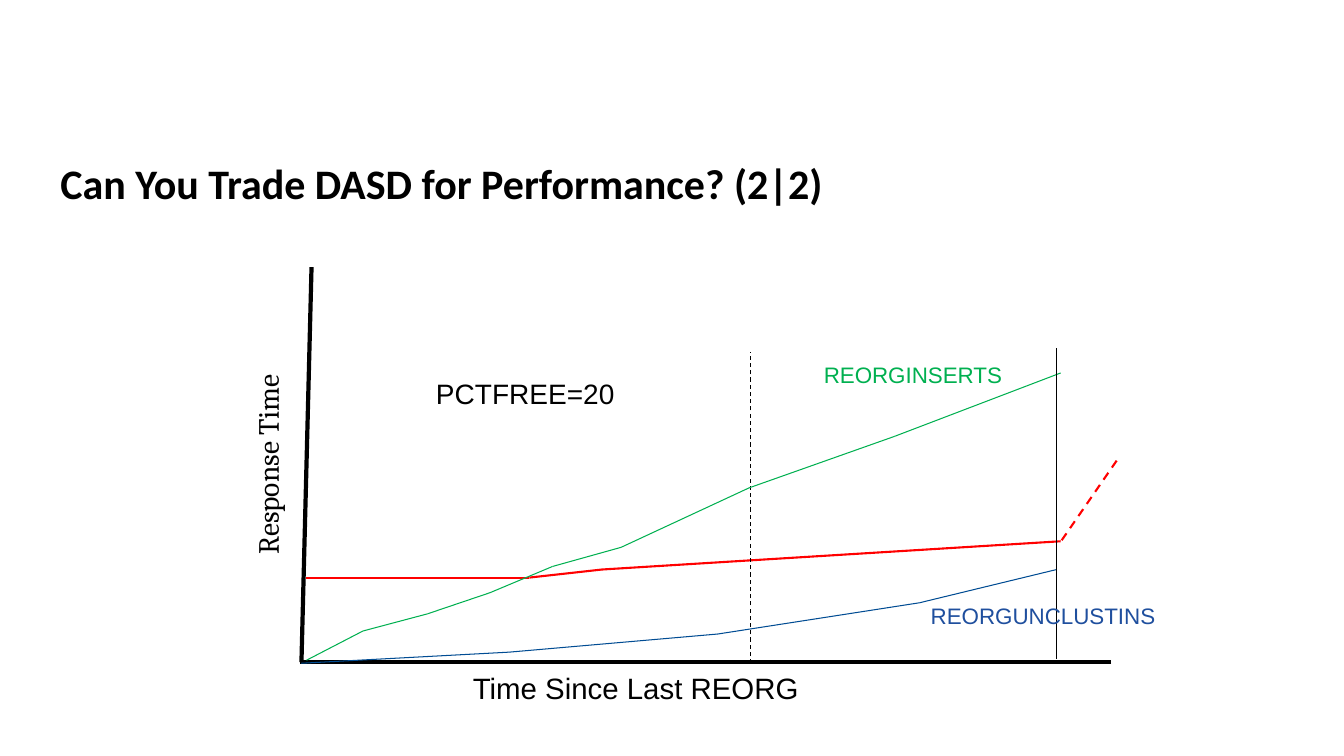
from itertools import pairwise

from lxml.etree import SubElement
from pptx import Presentation
from pptx.dml.color import RGBColor
from pptx.enum.dml import MSO_LINE
from pptx.enum.shapes import MSO_CONNECTOR
from pptx.enum.text import MSO_ANCHOR, MSO_AUTO_SIZE, PP_ALIGN
from pptx.oxml.ns import qn
from pptx.util import Inches, Pt

BLACK = RGBColor(0x00, 0x00, 0x00)
RED = RGBColor(0xFF, 0x00, 0x00)
GREEN = RGBColor(0x00, 0xB0, 0x50)
BLUE = RGBColor(0x00, 0x4C, 0x93)
INDIGO = RGBColor(0x1F, 0x4F, 0x9E)

COLS = 8  # columns across the plot box; cells are square

# Points are (column, row) from the top left of the plot box.
LINES = [
    # points, colour, width, dashed
    ([(0.09, 0.05), (-0.01, 3.97)], BLACK, 3, False),
    ([(8.02, 3.97), (-0.02, 3.97)], BLACK, 3, False),
    ([(0.04, 3.13), (2.25, 3.13), (2.97, 3.05), (4.43, 2.96),
      (7.52, 2.77)], RED, 1.5, False),
    ([(7.53, 2.76), (8.11, 1.92)], RED, 1.5, True),
    ([(4.44, 3.98), (4.44, 0.89)], BLACK, 0.75, True),
    ([(0.04, 3.95), (0.6, 3.66), (1.24, 3.49), (1.86, 3.28), (2.48, 3.02),
      (3.16, 2.83), (4.43, 2.24), (5.87, 1.73), (7.52, 1.1)],
     GREEN, 0.75, False),
    ([(-0.01, 3.98), (2.05, 3.87), (4.12, 3.69), (6.12, 3.38),
      (7.48, 3.05)], BLUE, 0.75, False),
    ([(7.48, 3.94), (7.48, 0.85)], BLACK, 0.75, False),
]

LABELS = [
    # text, (column, row, columns, rows), size, font, colour, turn
    ("Response Time", (-1.61, 1.77, 2.54, 0.47), 21, "Cambria", BLACK, 270),
    ("Time Since Last REORG", (1.45, 4, 3.71, 0.47), 21, "Arial", BLACK, 0),
    ("REORGUNCLUSTINS", (6.05, 3.32, 2.59, 0.38), 16, "Arial", INDIGO, 0),
    ("REORGINSERTS", (4.76, 0.93, 2.59, 0.38), 16, "Arial", GREEN, 0),
    ("PCTFREE=20", (1.18, 1.09, 2.06, 0.45), 20, "Arial", BLACK, 0),
]


def style(para, size, font, color, bold=False):
    for run in para.runs:
        run.font.size = Pt(size)
        run.font.name = font
        run.font.bold = bold
        run.font.color.rgb = color


def add_title(slide, box):
    title = slide.shapes.title
    title.left, title.top, title.width, title.height = box
    frame = title.text_frame
    frame.text = "Can You Trade DASD for Performance? (2|2)"
    frame.auto_size = MSO_AUTO_SIZE.NONE
    frame.vertical_anchor = MSO_ANCHOR.MIDDLE
    para = frame.paragraphs[0]
    para.alignment = PP_ALIGN.LEFT
    para.line_spacing = 0.9
    style(para, 30, "Calibri", BLACK, True)


def add_curve(slide, points, color, width, dashed):
    """Join consecutive slide points with straight connectors."""
    for start, end in pairwise(points):
        line = slide.shapes.add_connector(MSO_CONNECTOR.STRAIGHT, *start, *end)
        line.line.color.rgb = color
        line.line.width = Pt(width)
        if dashed:
            line.line.dash_style = MSO_LINE.DASH
        SubElement(line._element.spPr, qn("a:effectLst"))


def add_label(slide, box, text, size, font, color, turn):
    label = slide.shapes.add_textbox(*box)
    label.rotation = turn
    frame = label.text_frame
    frame.word_wrap = True
    frame.text = text
    para = frame.paragraphs[0]
    para.alignment = PP_ALIGN.CENTER
    style(para, size, font, color)


def add_plot(slide, box):
    left, top, width = box
    cell = width / COLS

    def place(col, row):
        return int(left + col * cell), int(top + row * cell)

    for points, *look in LINES:
        add_curve(slide, [place(*point) for point in points], *look)
    for text, (col, row, cols, rows), *look in LABELS:
        area = (*place(col, row), int(cols * cell), int(rows * cell))
        add_label(slide, area, text, *look)


def main():
    deck = Presentation()
    deck.slide_width, deck.slide_height = Inches(13.33), Inches(7.5)
    slide = deck.slides.add_slide(deck.slide_layouts[5])
    add_title(slide, [Inches(n) for n in (0.5, 1.41, 10.72, 0.87)])
    add_plot(slide, [Inches(n) for n in (3, 2.6, 8)])
    deck.save("out.pptx")


if __name__ == "__main__":
    main()
